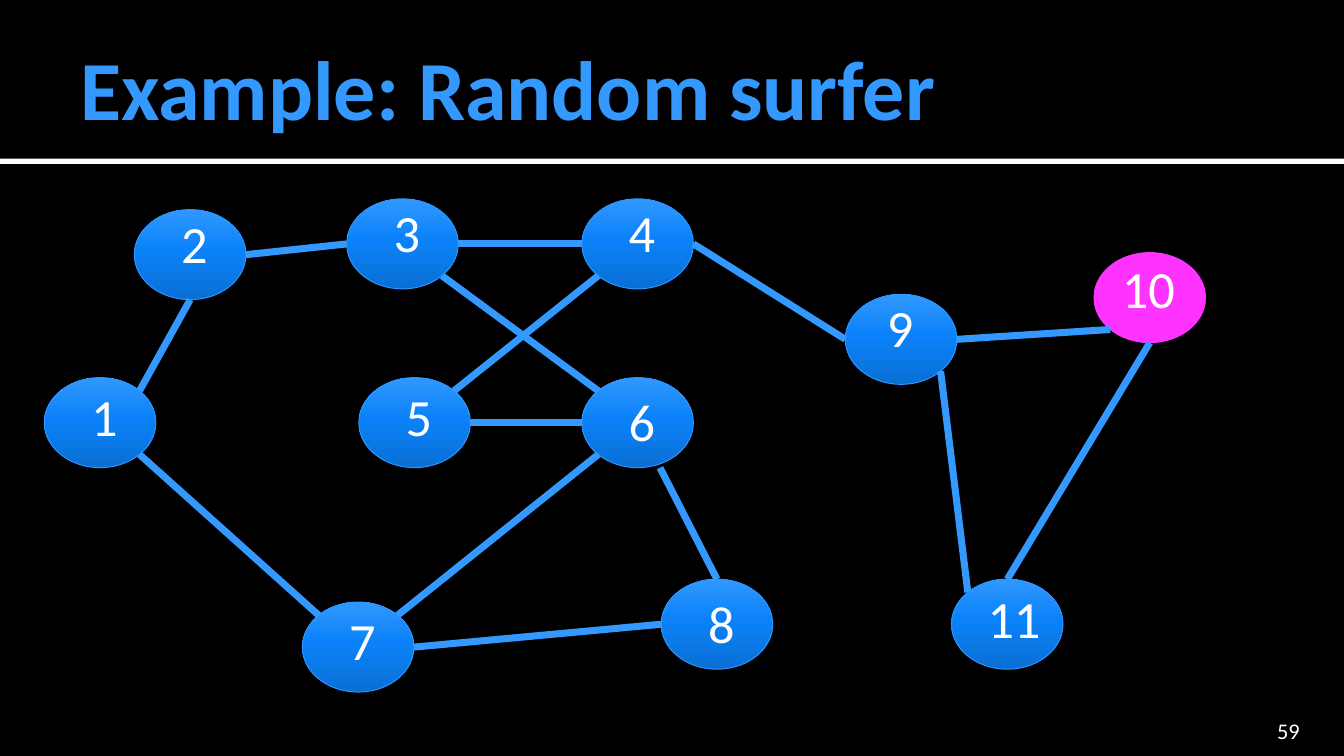
from copy import deepcopy
from math import sqrt
from pptx import Presentation
from pptx.dml.color import RGBColor
from pptx.enum import shapes, text
from pptx.oxml import ns, xmlchemy
from pptx.util import Inches, Pt

BLUE, PINK, WHITE, BLACK = "3399FF", "FF33FF", "FFFFFF", "000000"
GRAD = [(0, "0A6FD4"), (0.55, "0B82F9"), (1, "3098FF")]
WIDE, HIGH = 0.83, 0.67

NODES = {
    1: (0.33, 2.81), 2: (1, 1.56), 3: (2.58, 1.48), 4: (4.33, 1.48),
    5: (2.67, 2.81), 6: (4.33, 2.81), 7: (2.25, 4.48), 8: (4.92, 4.31),
    9: (6.29, 2.19), 10: (8.14, 1.88), 11: (7.08, 4.31),
}
LABELS = {
    1: (0.58, 2.81), 2: (1.25, 1.52), 3: (2.83, 1.44), 4: (4.58, 1.44),
    5: (2.92, 2.81), 6: (4.58, 2.85), 7: (2.5, 4.48), 8: (5.17, 4.35),
    9: (6.5, 2.15), 10: (8.25, 1.86), 11: (7.25, 4.31),
}
EDGES = [
    (1, "NE", 2, "S"), (2, "E", 3, "W"), (3, "E", 4, "W"),
    (4, "E", 9, "W"), (9, "E", 10, "SW"), (10, "S", 11, "N"),
    (9, "SE", 11, "NW"), (4, "SW", 5, "NE"), (3, "SE", 6, "NW"),
    (5, "E", 6, "W"), (6, "SW", 7, "NE"), (6, "SSE", 8, "N"),
    (7, "E", 8, "W"), (1, "SE", 7, "NW"),
]
D = sqrt(0.5)
SITES = {
    "N": (0, -1), "S": (0, 1), "E": (1, 0), "W": (-1, 0),
    "NE": (D, -D), "NW": (-D, -D), "SE": (D, D), "SW": (-D, D),
    "SSE": (0.4, 1),
}


def color(code):
    return RGBColor.from_string(code)


def box(at, words, size, **form):
    frame = slide.shapes.add_textbox(*map(Inches, at)).text_frame
    look = {"word_wrap": True, "margin_left": Inches(0.1),
            "margin_top": Inches(0.05), **form}
    for name, value in look.items():
        setattr(frame, name, value)
    para = frame.paragraphs[0]
    run = para.add_run()
    run.text = words
    for name, value in {"name": "Calibri", "size": Pt(size)}.items():
        setattr(run.font, name, value)
    run.font.color.rgb = color(WHITE)
    return para, run.font


def solid(kind, at, code):
    shape = slide.shapes.add_shape(kind, *map(Inches, at))
    shape.shadow.inherit = False
    shape.fill.solid()
    shape.fill.fore_color.rgb = color(code)
    shape.line.fill.background()
    return shape


def shade(shape):
    shape.fill.gradient()
    shape.fill.gradient_angle = 90
    stops = shape._element.spPr.find(ns.qn("a:gradFill")).find(ns.qn("a:gsLst"))
    stops.append(deepcopy(stops[0]))
    for stop, (place, code) in zip(shape.fill.gradient_stops, GRAD):
        stop.position = place
        stop.color.rgb = color(code)


def point(node, site):
    x, y = NODES[node]
    dx, dy = SITES[site]
    return Inches(x + WIDE / 2 * (1 + dx)), Inches(y + HIGH / 2 * (1 + dy))


deck = Presentation()
deck.slide_width, deck.slide_height = Inches(10), Inches(10 * 9 / 16)
slide = deck.slides.add_slide(deck.slide_layouts[6])
slide.background.fill.solid()
slide.background.fill.fore_color.rgb = color(BLACK)

solid(shapes.MSO_SHAPE.RECTANGLE, (0, 1.18, 10, 0.04), WHITE)
para, font = box((0.5, 0.13, 9, 1.03), "Example: Random surfer", 45,
                 margin_right=Inches(0.05),
                 vertical_anchor=text.MSO_ANCHOR.MIDDLE)
font.bold = True
font.color.rgb = color(BLUE)
para, font = box((8.97, 5.31, 0.8, 0.23), "59", 12, margin_bottom=0,
                 vertical_anchor=text.MSO_ANCHOR.BOTTOM)
para.alignment = text.PP_ALIGN.RIGHT

for node, at in NODES.items():
    oval = solid(shapes.MSO_SHAPE.OVAL, (*at, WIDE, HIGH), PINK)
    if node != 10:
        shade(oval)
    oval.line.color.rgb = color(PINK if node == 10 else "2D96FE")
    oval.line.width = Pt(0.5)

for a, start, b, end in EDGES:
    edge = slide.shapes.add_connector(
        shapes.MSO_CONNECTOR.STRAIGHT, *point(a, start), *point(b, end))
    edge.line.color.rgb = color(BLUE)
    edge.line.width = Pt(3.78)
    edge._element.spPr.append(xmlchemy.OxmlElement("a:effectLst"))

for node, at in LABELS.items():
    size = (0.83, 0.57) if node > 9 else (0.33, 1.04)
    box((*at, *size), str(node), 28)

deck.save("out.pptx")
